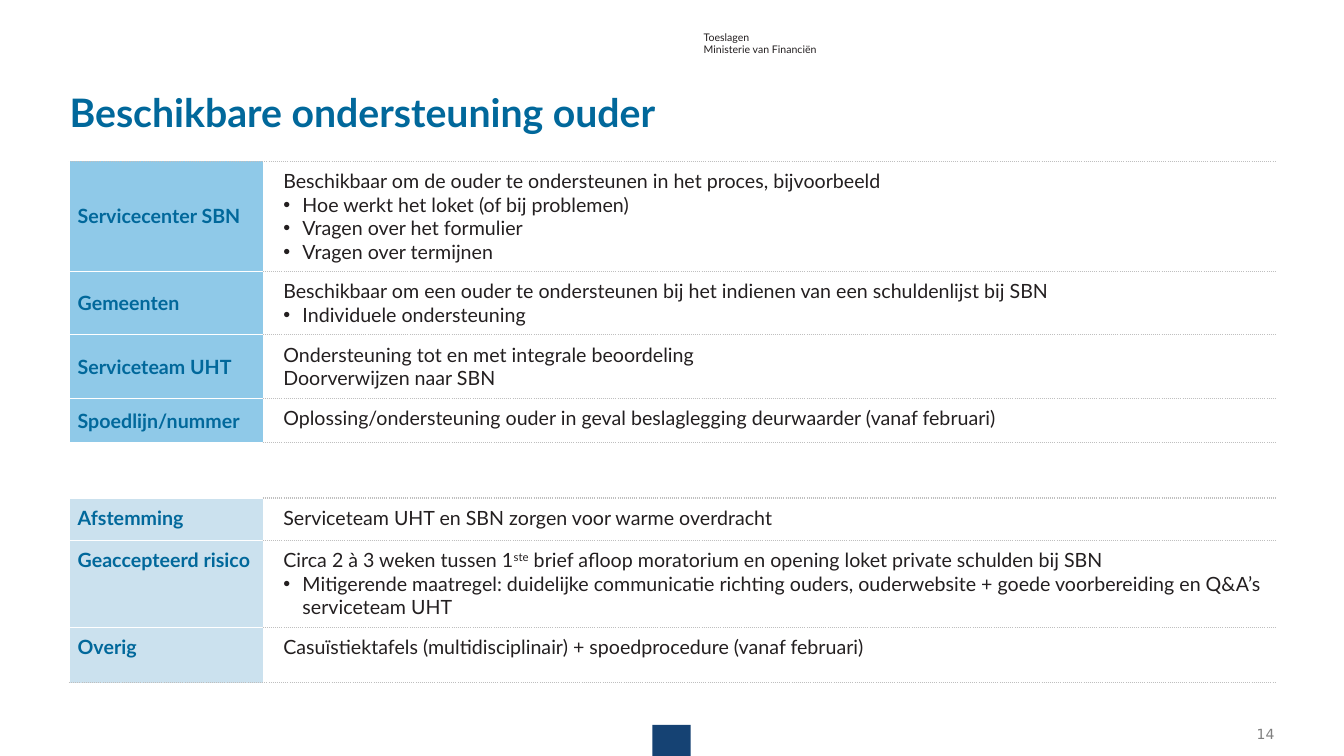
"""Build the slide about the support available to parents."""
import pptx
import pptx.dml.color
import pptx.enum.shapes
import pptx.enum.text
import pptx.oxml
import pptx.oxml.ns
import pptx.util

Inches = pptx.util.Inches
ANCHOR = pptx.enum.text.MSO_ANCHOR
ALIGN = pptx.enum.text.PP_ALIGN

COLORS = {
    "title": "01689B", "text": "231F20", "number": "808080", "navy": "154273",
    "support": "8FC9E8", "remarks": "CBE1EE", "white": "FFFFFF", "rule": "BFBFBF",
}
TITLE = "Beschikbare ondersteuning ouder"
SENDER = ["Toeslagen", "Ministerie van Financiën"]
PAGE_NUMBER = "14"

# "• " opens a bullet and ^…^ encloses superscript
ROWS = [
    ("Servicecenter SBN", "support", 1.09, [
        "Beschikbaar om de ouder te ondersteunen in het proces, bijvoorbeeld",
        "• Hoe werkt het loket (of bij problemen)",
        "• Vragen over het formulier",
        "• Vragen over termijnen"]),
    ("Gemeenten", "support", 0.62, [
        "Beschikbaar om een ouder te ondersteunen bij het indienen van een schuldenlijst bij SBN",
        "• Individuele ondersteuning"]),
    ("Serviceteam UHT", "support", 0.63, [
        "Ondersteuning tot en met integrale beoordeling",
        "Doorverwijzen naar SBN"]),
    ("Spoedlijn/nummer", "support", 0.44, [
        "Oplossing/ondersteuning ouder in geval beslaglegging deurwaarder (vanaf februari)"]),
    ("", None, 0.55, []),
    ("Afstemming", "remarks", 0.42, [
        "Serviceteam UHT en SBN zorgen voor warme overdracht"]),
    ("Geaccepteerd risico", "remarks", 0.85, [
        "Circa 2 à 3 weken tussen 1^ste^ brief afloop moratorium en opening loket private schulden bij SBN",
        "• Mitigerende maatregel: duidelijke communicatie richting ouders, ouderwebsite"
        " + goede voorbereiding en Q&A’s serviceteam UHT"]),
    ("Overig", "remarks", 0.55, [
        "Casuïstiektafels (multidisciplinair) + spoedprocedure (vanaf februari)"]),
]
COLUMN_WIDTHS = [1.92, 10.03]
LEFT, TABLE_TOP, CONTENT_WIDTH = 0.69, 1.6, 11.96


def rgb(name):
    return pptx.dml.color.RGBColor.from_string(COLORS[name])


def add_bullet(paragraph):
    properties = paragraph._p.get_or_add_pPr()
    properties.set("marL", str(Inches(0.19)))
    properties.set("indent", str(Inches(-0.19)))
    namespace = pptx.oxml.ns.nsdecls("a")
    properties.append(pptx.oxml.parse_xml(f'<a:buFont {namespace} typeface="Arial"/>'))
    properties.append(pptx.oxml.parse_xml(f'<a:buChar {namespace} char="•"/>'))


def write_text(frame, lines, size=14, color="text", bold=False, font="Lato",
               align=ALIGN.LEFT, spacing=None):
    frame.word_wrap = True
    for index, line in enumerate(lines):
        paragraph = frame.add_paragraph() if index else frame.paragraphs[0]
        paragraph.alignment = align
        if spacing:
            paragraph.line_spacing = spacing
        if line.startswith("• "):
            add_bullet(paragraph)
        for position, part in enumerate(line.removeprefix("• ").split("^")):
            run = paragraph.add_run()
            run.text = part
            run.font.name = font
            run.font.size = pptx.util.Pt(size)
            run.font.bold = bold
            run.font.color.rgb = rgb(color)
            if position % 2:
                run._r.get_or_add_rPr().set("baseline", "30000")


def set_margins(holder, left=0, others=0):
    holder.margin_left = Inches(left)
    holder.margin_top = holder.margin_right = holder.margin_bottom = Inches(others)


def set_borders(cell, dotted):
    properties = cell._tc.get_or_add_tcPr()
    for index, side in enumerate("LRTB"):
        color, dash = ("rule", "sysDot") if side in dotted else ("white", "solid")
        properties.insert(index, pptx.oxml.parse_xml(
            f'<a:ln{side} {pptx.oxml.ns.nsdecls("a")} w="12700"><a:solidFill>'
            f'<a:srgbClr val="{COLORS[color]}"/></a:solidFill>'
            f'<a:prstDash val="{dash}"/></a:ln{side}>'))


def add_support_table(slide):
    height = sum(row[2] for row in ROWS)
    table = slide.shapes.add_table(
        len(ROWS), 2, Inches(LEFT), Inches(TABLE_TOP),
        Inches(CONTENT_WIDTH), Inches(height)).table
    table.first_row = table.horz_banding = False
    for column, width in zip(table.columns, COLUMN_WIDTHS):
        column.width = Inches(width)
    for index, (label, fill, row_height, lines) in enumerate(ROWS):
        table.rows[index].height = Inches(row_height)
        label_cell, content_cell = table.cell(index, 0), table.cell(index, 1)
        set_margins(label_cell, 0.08, 0.08)
        set_margins(content_cell, 0.2, 0.08)
        content_cell.fill.background()
        if fill:
            label_cell.fill.solid()
            label_cell.fill.fore_color.rgb = rgb(fill)
            write_text(label_cell.text_frame, [label], color="title", bold=True)
            write_text(content_cell.text_frame, lines)
        else:
            label_cell.fill.background()
        if fill == "support":
            label_cell.vertical_anchor = ANCHOR.MIDDLE
        outer_edge = {0: "T", len(ROWS) - 1: "B"}.get(index, "")
        set_borders(label_cell, outer_edge)
        set_borders(content_cell, "TB")


def main():
    presentation = pptx.Presentation()
    presentation.slide_width = Inches(13.33)
    presentation.slide_height = Inches(7.5)
    slide = presentation.slides.add_slide(presentation.slide_layouts[5])

    marker = slide.shapes.add_shape(
        pptx.enum.shapes.MSO_SHAPE.RECTANGLE,
        Inches(6.47), Inches(7.19), Inches(0.38), Inches(0.31))
    marker.shadow.inherit = False
    marker.fill.solid()
    marker.fill.fore_color.rgb = rgb("navy")
    marker.line.fill.background()

    sender = slide.shapes.add_textbox(
        Inches(6.88), Inches(0.24), Inches(1.35), Inches(0.38)).text_frame
    sender.vertical_anchor = ANCHOR.MIDDLE
    write_text(sender, SENDER, size=7.5)

    number = slide.shapes.add_textbox(
        Inches(7.17), Inches(7.19), Inches(5.47), Inches(0.17)).text_frame
    set_margins(number)
    number.vertical_anchor = ANCHOR.BOTTOM
    write_text(number, [PAGE_NUMBER], size=10, color="number",
               font="DejaVu Sans", align=ALIGN.RIGHT)

    title = slide.shapes.title
    title.left, title.top = Inches(LEFT), Inches(0.93)
    title.width, title.height = Inches(CONTENT_WIDTH), Inches(0.44)
    set_margins(title.text_frame)
    title.text_frame.vertical_anchor = ANCHOR.TOP
    title.text_frame.auto_size = pptx.enum.text.MSO_AUTO_SIZE.NONE
    write_text(title.text_frame, [TITLE], size=28, color="title", bold=True, spacing=0.9)

    add_support_table(slide)
    presentation.save("out.pptx")


if __name__ == "__main__":
    main()
